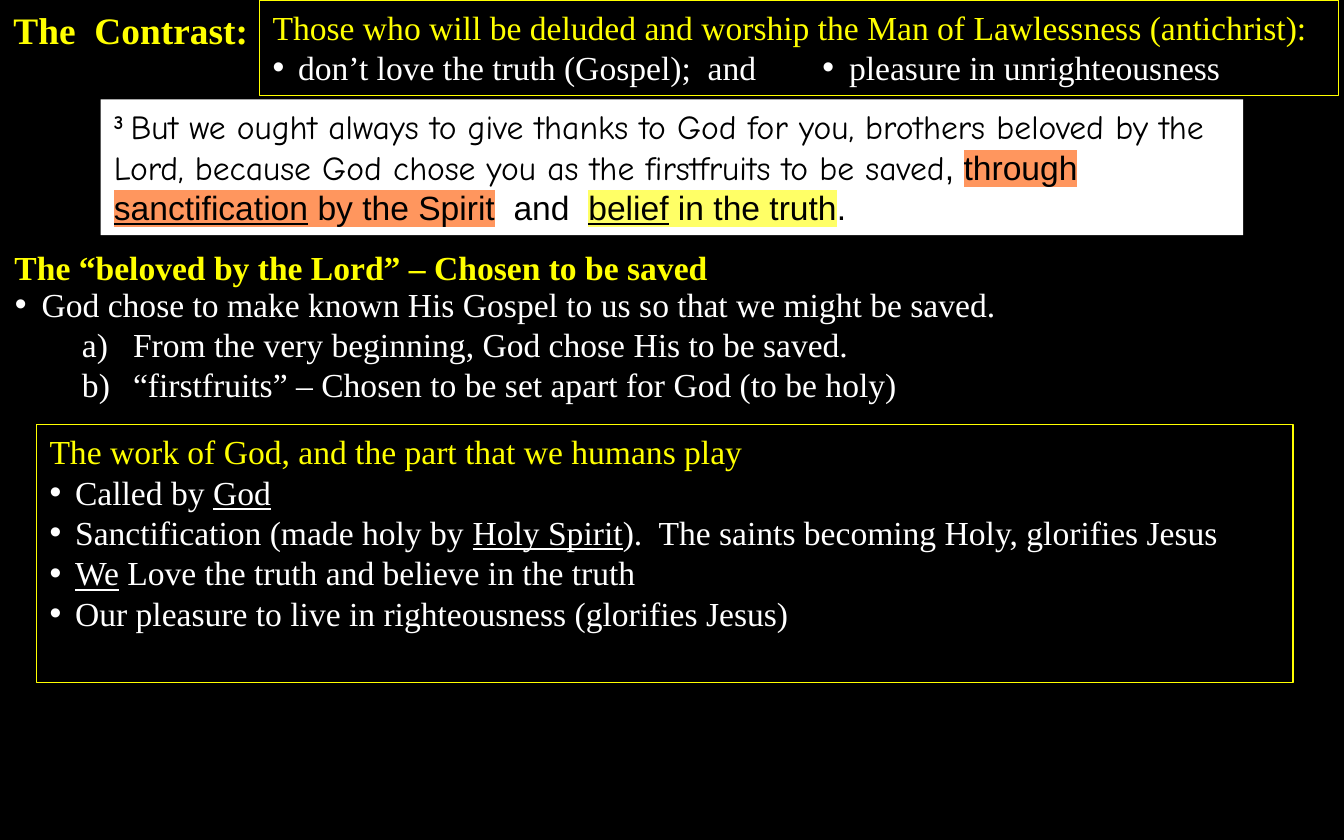
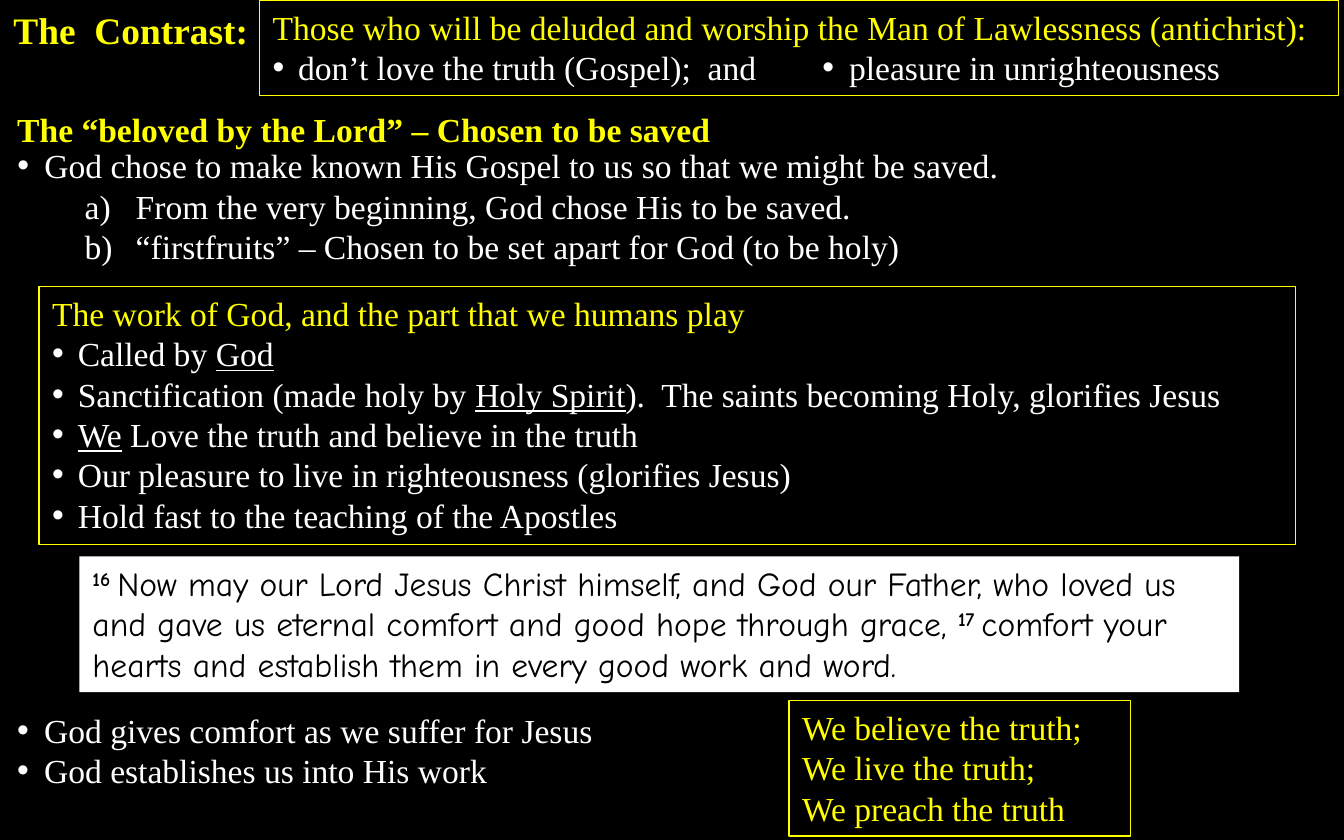
"""Build two slides contrasting the deluded with those chosen to be saved."""
import dataclasses

import lxml.etree
import pptx
import pptx.dml.color
import pptx.enum.shapes
import pptx.enum.text
import pptx.oxml.ns
import pptx.util

Inches = pptx.util.Inches
Pt = pptx.util.Pt

BLACK = pptx.dml.color.RGBColor(0x00, 0x00, 0x00)
WHITE = pptx.dml.color.RGBColor(0xFF, 0xFF, 0xFF)
YELLOW = pptx.dml.color.RGBColor(0xFF, 0xFF, 0x00)
ORANGE_MARK = pptx.dml.color.RGBColor(0xFF, 0x96, 0x5E)
YELLOW_MARK = pptx.dml.color.RGBColor(0xFF, 0xFF, 0x66)

SERIF = "Times New Roman"
SANS = "Arial"
VERSE = "Comic Neue"


@dataclasses.dataclass
class Span:
    text: str
    underline: bool = False
    raised: bool = False
    font: str = ""
    mark: pptx.dml.color.RGBColor = None


@dataclasses.dataclass
class Line:
    spans: tuple
    color: pptx.dml.color.RGBColor = WHITE
    font: str = SERIF
    size: int = 18
    bold: bool = False
    bullet: str = ""
    left: float = 0
    hanging: float = 0
    level: int = 0


def heading(text, **options):
    return Line((Span(text),), YELLOW, left=0.01, hanging=0.01, **options)


def item(*spans, indent=0.2):
    return Line(spans, bullet="•", left=indent, hanging=indent)


def lettered(text):
    return Line((Span(text),), bullet="a)", left=0.88, hanging=0.38, level=1)


def verse(*spans):
    return Line(spans, BLACK, VERSE)


class Deck:
    def __init__(self):
        self.presentation = pptx.Presentation()
        self.presentation.slide_width = Inches(10)
        self.presentation.slide_height = Inches(6.25)
        fill = self.presentation.slide_master.background.fill
        fill.solid()
        fill.fore_color.rgb = BLACK
        self.slide = None

    def add_slide(self):
        layout = self.presentation.slide_layouts[1]
        self.slide = self.presentation.slides.add_slide(layout)

    def add_run(self, paragraph, span):
        run = paragraph.add_run()
        run.text = span.text
        properties = run.font._element
        if span.underline:
            run.font.underline = True
        if span.raised:
            run.font.bold = True
            properties.set("baseline", "30000")
        if span.font:
            run.font.name = span.font
        if span.mark is not None:
            highlight = lxml.etree.Element(pptx.oxml.ns.qn("a:highlight"))
            color = lxml.etree.SubElement(highlight, pptx.oxml.ns.qn("a:srgbClr"))
            color.set("val", str(span.mark))
            properties.insert(0, highlight)

    def add_bullet(self, properties, bullet):
        def add(tag, **attributes):
            lxml.etree.SubElement(properties, pptx.oxml.ns.qn(tag), attributes)

        if bullet == "a)":
            add("a:buFont", typeface=SERIF)
            add("a:buAutoNum", type="alphaLcParenR")
        else:
            add("a:buFont", typeface=SANS)
            add("a:buChar", char=bullet)

    def set_lines(self, shape, lines):
        frame = shape.text_frame
        frame.word_wrap = True
        frame.auto_size = pptx.enum.text.MSO_AUTO_SIZE.NONE
        frame.vertical_anchor = pptx.enum.text.MSO_ANCHOR.TOP
        for index, line in enumerate(lines):
            paragraph = frame.add_paragraph() if index else frame.paragraphs[0]
            paragraph.level = line.level
            paragraph.alignment = pptx.enum.text.PP_ALIGN.LEFT
            paragraph.space_before = Pt(0)
            properties = paragraph._p.get_or_add_pPr()
            properties.set("marL", str(Inches(line.left)))
            properties.set("indent", str(-Inches(line.hanging)))
            if line.bullet:
                self.add_bullet(properties, line.bullet)
            paragraph.font.name = line.font
            paragraph.font.size = Pt(line.size)
            paragraph.font.bold = line.bold
            paragraph.font.color.rgb = line.color
            for span in line.spans:
                self.add_run(paragraph, span)

    def fill_placeholder(self, index, left, top, width, height, *lines):
        shape = self.slide.placeholders[index]
        shape.left, shape.top = Inches(left), Inches(top)
        shape.width, shape.height = Inches(width), Inches(height)
        self.set_lines(shape, lines)

    def title(self, text):
        line = Line((Span(text),), YELLOW, size=20, bold=True, left=0.35, hanging=0.35)
        self.fill_placeholder(0, 0, 0, 2.4, 0.44, line)

    def body(self, left, top, width, height, *lines):
        self.fill_placeholder(1, left, top, width, height, *lines)

    def text(self, left, top, width, height, *lines):
        box = self.slide.shapes.add_textbox(
            Inches(left), Inches(top), Inches(width), Inches(height))
        self.set_lines(box, lines)

    def rectangle(self, left, top, width, height, lines):
        shape = self.slide.shapes.add_shape(
            pptx.enum.shapes.MSO_SHAPE.RECTANGLE,
            Inches(left), Inches(top), Inches(width), Inches(height))
        shape.shadow.inherit = False
        self.set_lines(shape, lines)
        return shape

    def outlined_box(self, left, top, width, height, *lines):
        shape = self.rectangle(left, top, width, height, lines)
        shape.fill.background()
        shape.line.color.rgb = YELLOW
        shape.line.width = Pt(0.75)

    def verse_panel(self, left, top, width, *spans):
        shape = self.rectangle(left, top, width, 1.01, [verse(*spans)])
        shape.fill.solid()
        shape.fill.fore_color.rgb = WHITE
        shape.line.fill.background()

    def contrast(self):
        self.title("The  Contrast:")
        self.outlined_box(
            1.93, 0, 8.03, 0.71,
            heading("Those who will be deluded and worship the Man of Lawlessness (antichrist):"),
            item(Span("don’t love the truth (Gospel);  and"), indent=0.19))
        self.text(6.02, 0.3, 3.6, 0.4, item(Span("pleasure in unrighteousness")))

    def chosen(self, left, top, *further_works):
        self.text(left, top, 9.94, 0.4,
                  heading("The “beloved by the Lord” – Chosen to be saved", bold=True))
        self.body(
            left, top + 0.27, 9.97, 1.01,
            item(Span("God chose to make known His Gospel to us so that we might be saved.")),
            lettered("From the very beginning, God chose His to be saved."),
            lettered("“firstfruits” – Chosen to be set apart for God (to be holy)"))
        works = [
            (Span("Called by "), Span("God", underline=True)),
            (Span("Sanctification (made holy by "), Span("Holy Spirit", underline=True),
             Span(").  The saints becoming Holy, glorifies Jesus")),
            (Span("We", underline=True), Span(" Love the truth and believe in the truth")),
            (Span("Our pleasure to live in righteousness (glorifies Jesus)"),),
            *((Span(work),) for work in further_works),
        ]
        self.outlined_box(
            left + 0.26, top + 1.37, 9.35, 1.92,
            heading("The work of God, and the part that we humans play"),
            *(item(*spans, indent=0.19) for spans in works))


def main():
    deck = Deck()

    deck.add_slide()
    deck.contrast()
    deck.verse_panel(
        0.75, 0.74, 8.5,
        Span("3 ", raised=True),
        Span("But we ought always to give thanks to God for you, brothers beloved by the "
             "Lord, because God chose you as the firstfruits to be saved"),
        Span(", ", font=SANS),
        Span("through ", font=SANS, mark=ORANGE_MARK),
        Span("sanctification", underline=True, font=SANS, mark=ORANGE_MARK),
        Span(" by the Spirit", font=SANS, mark=ORANGE_MARK),
        Span("  and  ", font=SANS),
        Span("belief", underline=True, font=SANS, mark=YELLOW_MARK),
        Span(" in the truth", font=SANS, mark=YELLOW_MARK),
        Span(".", font=SANS))
    deck.chosen(0.01, 1.79)

    deck.add_slide()
    deck.contrast()
    deck.chosen(0.03, 0.76, "Hold fast to the teaching of the Apostles")
    deck.verse_panel(
        0.59, 4.14, 8.63,
        Span("16 ", raised=True),
        Span("Now may our Lord Jesus Christ himself, and God our Father, who loved us "
             "and gave us eternal comfort and good hope through grace, "),
        Span("17 ", raised=True),
        Span("comfort your hearts and establish them in every good work and word."))
    deck.text(0.03, 5.23, 9.97, 0.71,
              item(Span("God gives comfort as we suffer for Jesus")),
              item(Span("God establishes us into His work")))
    deck.outlined_box(5.87, 5.21, 2.54, 1.01,
                      heading("We believe the truth;"),
                      heading("We live the truth;"),
                      heading("We preach the truth"))

    deck.presentation.save("out.pptx")


if __name__ == "__main__":
    main()
